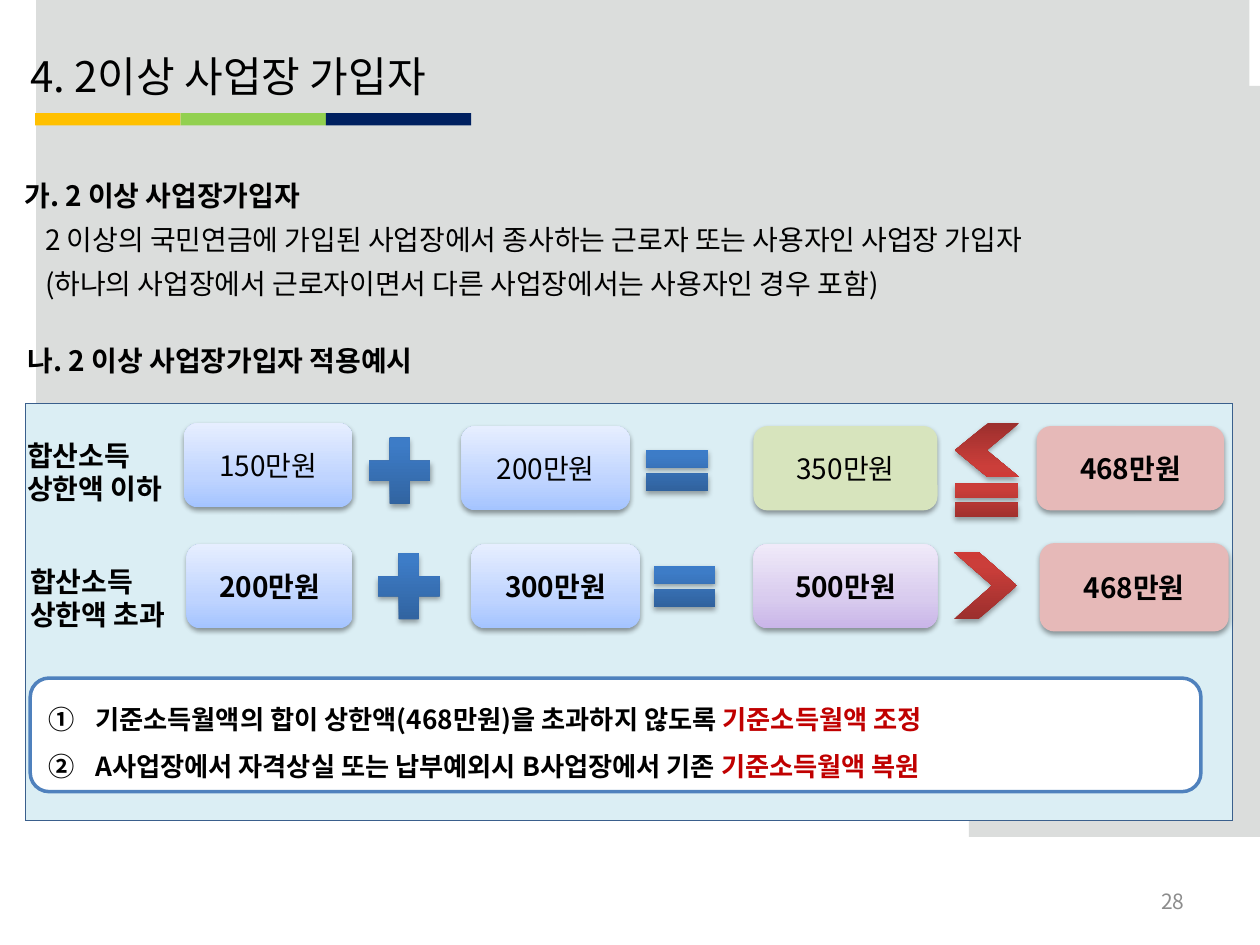
from lxml.etree import SubElement
from pptx import Presentation
from pptx.dml.color import RGBColor
from pptx.enum.dml import MSO_LINE
from pptx.enum.shapes import MSO_SHAPE as Form
from pptx.enum.text import MSO_ANCHOR as Anchor, PP_ALIGN as Align
from pptx.oxml import parse_xml
from pptx.oxml.ns import nsdecls, qn
from pptx.util import Cm, Pt

FONT = "Noto Sans CJK KR"
BLACK, WHITE = RGBColor(0, 0, 0), RGBColor(255, 255, 255)
GREY, NUMBER_GREY = RGBColor(0xDB, 0xDD, 0xDC), RGBColor(0x8C, 0x8C, 0x8C)
AMBER, LIME, NAVY = RGBColor(0xFF, 0xC0, 0), RGBColor(0x92, 0xD0, 0x50), RGBColor(0, 0x20, 0x60)
PANEL, PANEL_EDGE = RGBColor(0xDB, 0xEE, 0xF4), RGBColor(0x3A, 0x5F, 0x8C)
NOTE_EDGE, RED = RGBColor(0x4F, 0x81, 0xBD), RGBColor(0xC0, 0, 0)
PINK, GREEN = RGBColor(0xE6, 0xB9, 0xB8), RGBColor(0xD7, 0xE4, 0xBD)


def gradient(positions, *colours):
    return [(at, RGBColor.from_string(colour)) for at, colour in zip(positions, colours)]


SOFT, STRONG = (0, 35, 100), (0, 80, 100)
BLUE_BOX = gradient(SOFT, "A4C4FF", "BFD4FF", "E6EEFF")
PURPLE_BOX = gradient(SOFT, "C9B5E8", "D8CBEE", "F0EAF9")
BLUE_SIGN = gradient(STRONG, "2F5F99", "3D7CC7", "3A7CCB")
RED_SIGN = gradient(STRONG, "9C2F2D", "CB3E3A", "CE3B37")


class SlideMaker:
    def __init__(self, page):
        self.page = page

    def shape(self, place, fill, form=Form.RECTANGLE, adjust=(), shadow=None):
        shape = self.page.shapes.add_shape(form, *map(Cm, place))
        for index, value in enumerate(adjust):
            shape.adjustments[index] = value
        shape.line.fill.background()
        shape.shadow.inherit = False
        if isinstance(fill, list):
            self.blend(shape, fill)
        else:
            shape.fill.solid()
            shape.fill.fore_color.rgb = fill
        if shadow:
            self.cast(shape, *shadow)
        return shape

    def blend(self, shape, stops):
        shape.fill.gradient()
        shape.fill.gradient_angle = 90  # counter-clockwise: runs upwards
        stop_list = shape._element.spPr.find(".//" + qn("a:gsLst"))
        for old in list(stop_list):
            stop_list.remove(old)
        for at, colour in stops:
            stop = SubElement(stop_list, qn("a:gs"), pos=str(at * 1000))
            SubElement(stop, qn("a:srgbClr"), val=str(colour))

    def cast(self, shape, opacity, distance):
        effects = shape._element.spPr.find(qn("a:effectLst"))
        effects.append(parse_xml(
            f'<a:outerShdw {nsdecls("a")} blurRad="{Pt(3.1)}" dist="{Pt(distance)}" '
            f'dir="5400000" rotWithShape="0"><a:srgbClr val="000000">'
            f'<a:alpha val="{opacity * 1000}"/></a:srgbClr></a:outerShdw>'))

    def backdrop(self, place):
        shape = self.shape(place, GREY)
        self.page.shapes._spTree.insert(2, shape._element)

    def sign(self, place, form, fill, adjust=()):
        return self.shape(place, fill, form, adjust, (35, 1.8))

    def amount(self, place, text, fill, bold):
        box = self.shape(place, fill, Form.ROUNDED_RECTANGLE, shadow=(38, 1.6))
        self.set_text(box, [text], bold=bold, align=Align.CENTER, anchor=Anchor.MIDDLE)

    def label(self, place, lines, inset=None, wrap=True, **style):
        box = self.page.shapes.add_textbox(*map(Cm, place))
        self.set_text(box, lines, inset, wrap, **style)

    def placeholder(self, index, place, lines, inset, wrap=True, **style):
        box = self.page.placeholders[index]
        box.left, box.top, box.width, box.height = map(Cm, place)
        self.set_text(box, lines, inset, wrap, **style)
        return box

    def set_text(self, box, lines, inset=None, wrap=True, size=16, bold=False, colour=BLACK,
                 align=Align.LEFT, anchor=Anchor.TOP, spacing=1.0):
        """Fill a box; a line is a string or a list of (text, colour) spans."""
        frame = box.text_frame
        frame.word_wrap, frame.vertical_anchor = wrap, anchor
        if inset:
            frame.margin_left = frame.margin_right = Cm(inset[0])
            frame.margin_top = frame.margin_bottom = Cm(inset[1])
        for index, line in enumerate(lines):
            para = frame.add_paragraph() if index else frame.paragraphs[0]
            para.alignment, para.line_spacing = align, spacing
            para.space_before = Pt(0)
            for text, tint in [(line, colour)] if isinstance(line, str) else line:
                span = para.add_run()
                span.text = text
                font = span.font
                font.size, font.bold, font.name = Pt(size), bold, FONT
                font.color.rgb = tint
                SubElement(font._element, qn("a:ea"), typeface=FONT)

    def indent(self, para, left, first, bullet, **attributes):
        properties = para._p.get_or_add_pPr()
        properties.set("marL", str(Cm(left)))
        properties.set("indent", str(Cm(first)))
        SubElement(properties, qn(bullet), **attributes)


def main():
    deck = Presentation()
    deck.slide_width, deck.slide_height = Cm(25.4), Cm(19.05)
    page = deck.slides.add_slide(deck.slide_layouts[1])
    maker = SlideMaker(page)

    # Backdrop and page number
    maker.backdrop((19.53, 1.73, 5.87, 15.14))
    maker.backdrop((0.73, 0, 24.46, 16.05))
    maker.label((18.21, 17.65, 5.92, 1.02), ["28"], size=12, colour=NUMBER_GREY,
                align=Align.RIGHT, anchor=Anchor.MIDDLE)

    # Title with its three-colour rule
    maker.placeholder(0, (0.38, 0.91, 9.53, 1.24), ["4. 2이상 사업장 가입자"],
                      (0.23, 0.1), wrap=False, size=24)
    page.shapes.add_group_shape([
        maker.shape((0.71 + 2.93 * index, 2.28, 2.93, 0.25), colour)
        for index, colour in enumerate((AMBER, LIME, NAVY))])

    # Definition
    tight = (0.13, 0.13)
    body = maker.placeholder(1, (0.36, 2.92, 23.85, 3.61), [
        "가. 2 이상 사업장가입자",
        "2 이상의 국민연금에 가입된 사업장에서 종사하는 근로자 또는 사용자인 사업장 가입자",
        "(하나의 사업장에서 근로자이면서 다른 사업장에서는 사용자인 경우 포함)",
    ], tight, anchor=Anchor.MIDDLE, spacing=1.3)
    heading, *details = body.text_frame.paragraphs
    heading.runs[0].font.bold = True
    maker.indent(heading, 0, 0, "a:buNone")
    for para in details:
        maker.indent(para, 0.42, 0, "a:buNone")

    # Example panel
    maker.label((0.43, 6.4, 23.88, 1.52), ["나. 2 이상 사업장가입자 적용예시"], tight,
                bold=True, anchor=Anchor.MIDDLE, spacing=1.3)
    panel = maker.shape((0.51, 8.13, 24.33, 8.41), PANEL)
    panel.line.color.rgb, panel.line.width = PANEL_EDGE, Pt(0.25)
    panel.line.dash_style = MSO_LINE.ROUND_DOT

    # Row names
    for left, top, case in ((0.3, 8.71, "상한액 이하"), (0.36, 11.25, "상한액 초과")):
        maker.label((left, top, 3.35, 1.63), ["합산소득", case], wrap=False, bold=True)

    # Amounts
    for left, top, width, height, text, fill, bold in (
            (3.71, 8.53, 3.4, 1.7, "150만원", BLUE_BOX, False),
            (9.3, 8.59, 3.4, 1.7, "200만원", BLUE_BOX, False),
            (15.19, 8.59, 3.71, 1.7, "350만원", GREEN, False),
            (20.9, 8.59, 3.78, 1.7, "468만원", PINK, True),
            (3.76, 10.97, 3.35, 1.7, "200만원", BLUE_BOX, True),
            (9.5, 10.97, 3.4, 1.7, "300만원", BLUE_BOX, True),
            (15.19, 10.97, 3.71, 1.7, "500만원", PURPLE_BOX, True),
            (20.96, 10.95, 3.81, 1.78, "468만원", PINK, True)):
        maker.amount((left, top, width, height), text, fill, bold)

    # Signs
    bars, angle = (0.355, 0.118), (0.607,)
    for left, top in ((7.21, 8.59), (7.39, 10.92)):
        maker.sign((left, top, 1.7, 1.8), Form.MATH_PLUS, BLUE_SIGN)
    for left, top in ((12.8, 8.99), (12.95, 11.33)):
        maker.sign((left, top, 1.7, 0.99), Form.MATH_EQUAL, BLUE_SIGN, bars)
    less = maker.sign((19.25, 8.53, 1.3, 1.09), Form.CHEVRON, RED_SIGN, angle)
    less.rotation = 180
    equal = maker.sign((19.02, 9.68, 1.73, 0.81), Form.MATH_EQUAL, RED_SIGN, bars)
    page.shapes.add_group_shape([less, equal])
    maker.sign((19.23, 11.13, 1.27, 1.35), Form.CHEVRON, RED_SIGN, angle)

    # Numbered notes
    notes = maker.shape((0.61, 13.67, 23.6, 2.29), WHITE, Form.ROUNDED_RECTANGLE)
    notes.line.color.rgb, notes.line.width = NOTE_EDGE, Pt(2)
    maker.set_text(notes, [
        [("기준소득월액의 합이 상한액(468만원)을 초과하지 않도록 ", BLACK),
         ("기준소득월액 조정", RED)],
        [("A사업장에서 자격상실 또는 납부예외시 B사업장에서 기존 ", BLACK),
         ("기준소득월액 복원", RED)],
    ], size=15, bold=True, anchor=Anchor.MIDDLE, spacing=1.5)
    for para in notes.text_frame.paragraphs:
        maker.indent(para, 0.95, -0.95, "a:buAutoNum", type="circleNumDbPlain")

    deck.save("out.pptx")


if __name__ == "__main__":
    main()
